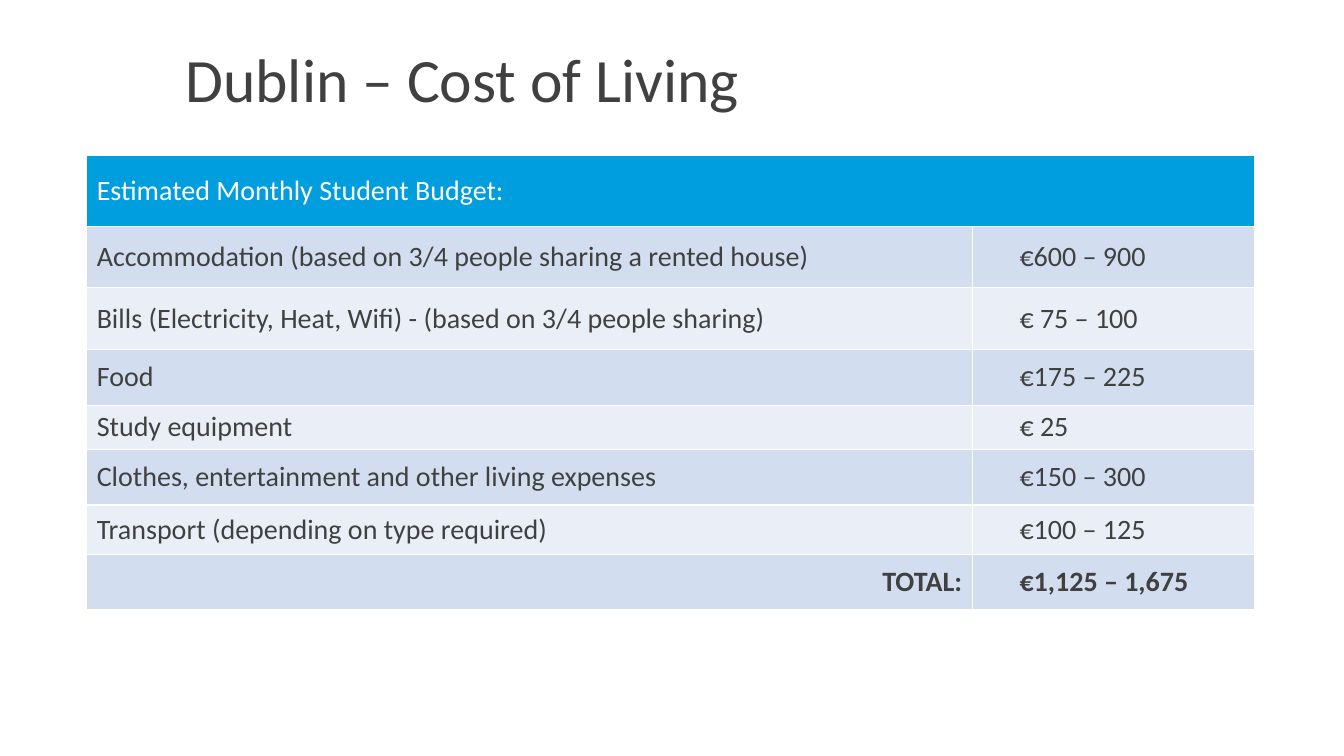
import pptx
import pptx.dml.color
import pptx.enum.text
import pptx.oxml
import pptx.oxml.ns
import pptx.util

Inches = pptx.util.Inches
ALIGN = pptx.enum.text.PP_ALIGN
MIDDLE = pptx.enum.text.MSO_ANCHOR.MIDDLE
DARK, WHITE, BLUE = "404040", "FFFFFF", "009EDF"
BANDS = ["D2DEEF", "EAEFF7"]

HEADING = "Estimated Monthly Student Budget:"
HEADING_HEIGHT = 0.71
COLUMN_WIDTHS = [8.79, 2.8]
VALUE_INDENT = 0.47
# Item, monthly cost, row height
BUDGET = [
    ("Accommodation (based on 3/4 people sharing a rented house)", "€600 – 900", 0.6),
    ("Bills (Electricity, Heat, Wifi) - (based on 3/4 people sharing)", "€ 75 – 100", 0.62),
    ("Food", "€175 – 225", 0.55),
    ("Study equipment", "€ 25", 0.44),
    ("Clothes, entertainment and other living expenses", "€150 – 300", 0.55),
    ("Transport (depending on type required)", "€100 – 125", 0.49),
    ("TOTAL:", "€1,125 – 1,675", 0.55),
]


def rgb(color):
    return pptx.dml.color.RGBColor.from_string(color)


def write(tf, text, size, color=DARK, bold=False, **paragraph_format):
    p = tf.paragraphs[0]
    for name, value in paragraph_format.items():
        setattr(p, name, value)
    r = p.add_run()
    r.text = text
    font_format = {"name": "Calibri", "size": pptx.util.Pt(size), "bold": bold}
    for name, value in font_format.items():
        setattr(r.font, name, value)
    r.font.color.rgb = rgb(color)


def style_cell(cell, fill):
    cell.vertical_anchor = MIDDLE
    # Borders come before the fill in the cell properties
    tcPr = cell._tc.get_or_add_tcPr()
    for side in ("lnL", "lnR", "lnT", "lnB"):
        tcPr.append(pptx.oxml.parse_xml(
            f'<a:{side} {pptx.oxml.ns.nsdecls("a")} w="{pptx.util.Pt(1)}">'
            f'<a:solidFill><a:srgbClr val="{WHITE}"/></a:solidFill></a:{side}>'))
    cell.fill.solid()
    cell.fill.fore_color.rgb = rgb(fill)


def add_title(s, left, top, width, height):
    sp = s.shapes.add_textbox(*map(Inches, (left, top, width, height)))
    tf = sp.text_frame
    tf.word_wrap = True
    tf.vertical_anchor = MIDDLE
    write(tf, "Dublin – Cost of Living", 44, line_spacing=0.9)


def add_budget(s, left, top, width, height):
    table = s.shapes.add_table(len(BUDGET) + 1, 2,
                               *map(Inches, (left, top, width, height))).table
    # Scale the columns and rows to the box
    for column, share in zip(table.columns, COLUMN_WIDTHS):
        column.width = Inches(width * share / sum(COLUMN_WIDTHS))
    heights = [HEADING_HEIGHT] + [row[2] for row in BUDGET]
    for row, share in zip(table.rows, heights):
        row.height = Inches(height * share / sum(heights))

    # Heading across both columns
    heading = table.cell(0, 0)
    heading.merge(table.cell(0, 1))
    for cell in table.rows[0].cells:
        style_cell(cell, BLUE)
    write(heading.text_frame, HEADING, 20, WHITE)

    # Banded budget rows, ending with the bold total
    for i, (item, cost, _) in enumerate(BUDGET):
        is_total = i == len(BUDGET) - 1
        item_cell, cost_cell = table.rows[i + 1].cells
        for cell in (item_cell, cost_cell):
            style_cell(cell, BANDS[i % 2])
        cost_cell.margin_left = Inches(VALUE_INDENT)
        write(item_cell.text_frame, item, 20, bold=is_total,
              alignment=ALIGN.RIGHT if is_total else ALIGN.LEFT)
        write(cost_cell.text_frame, cost, 20, bold=is_total)


def main():
    prs = pptx.Presentation()
    prs.slide_width, prs.slide_height = Inches(13.33), Inches(7.5)
    s = prs.slides.add_slide(prs.slide_layouts[6])
    add_budget(s, 0.86, 1.54, 11.58, 4.51)
    add_title(s, 1.74, 0.09, 11.5, 1.45)
    prs.save("out.pptx")


if __name__ == "__main__":
    main()
